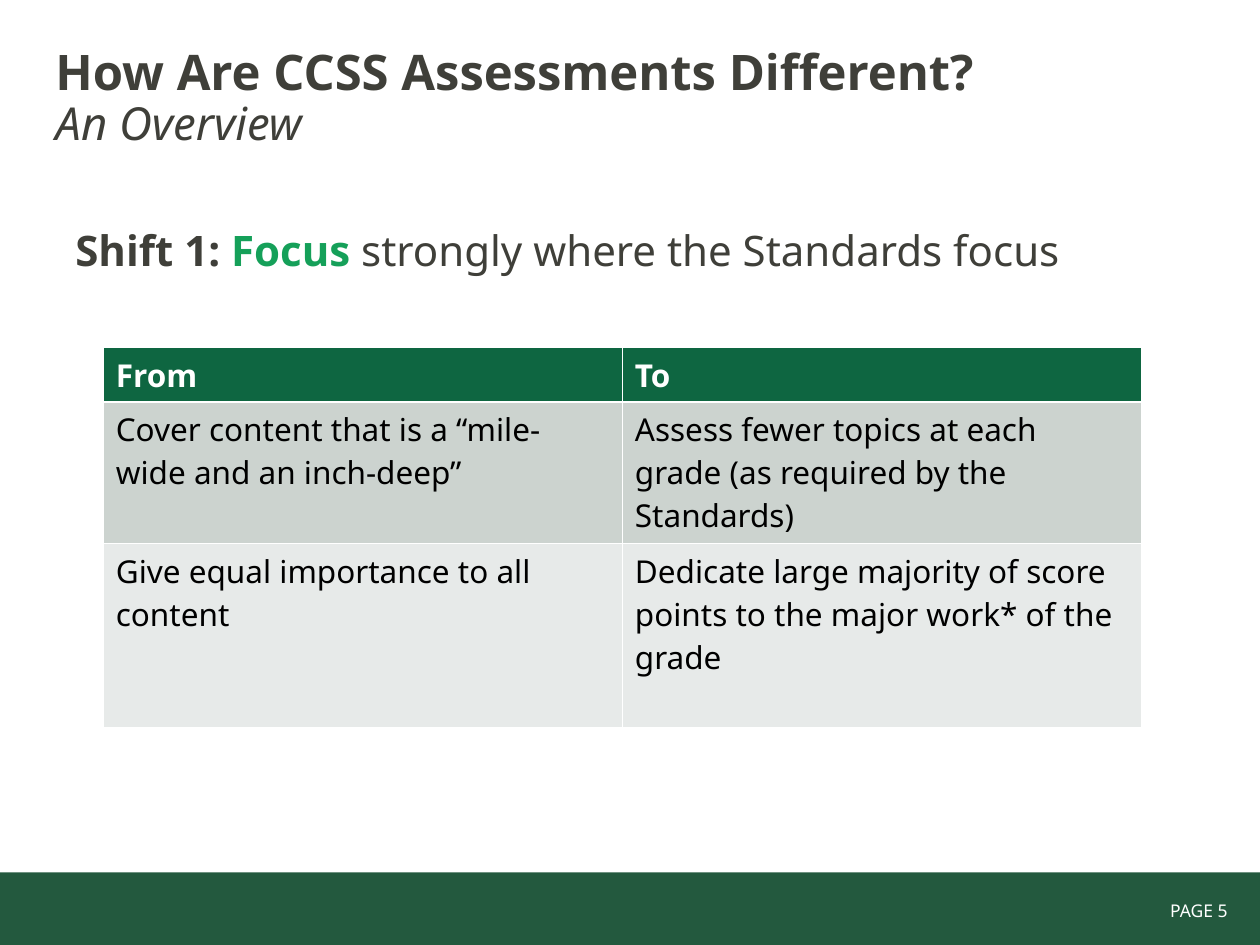
import pptx
import pptx.util
import pptx.dml.color
import pptx.enum.shapes
import pptx.enum.text

Pt = pptx.util.Pt
Align = pptx.enum.text.PP_ALIGN


def color(code):
    return pptx.dml.color.RGBColor.from_string(code)


class Page:
    face = "Noto Sans"
    dark = "3F3F39"
    white = "FFFFFF"
    green = "15A059"
    band = "23593E"
    fills = ["0E6641", "CCD3CF", "E7EAE9"]

    def __init__(self, deck):
        self.slide = deck.slides.add_slide(deck.slide_layouts[5])

    def place(self, shape, box):
        shape.left, shape.top, shape.width, shape.height = map(Pt, box)

    def style(self, font, size, code, bold=None):
        font.name = self.face
        font.size = Pt(size)
        font.color.rgb = color(code)
        font.bold = bold

    def bar(self, box):
        shape = self.slide.shapes.add_shape(
            pptx.enum.shapes.MSO_SHAPE.RECTANGLE, *map(Pt, box))
        shape.shadow.inherit = False
        shape.fill.solid()
        shape.fill.fore_color.rgb = color(self.band)
        shape.line.fill.background()

    def title(self, box, head, sub):
        shape = self.slide.shapes.title
        self.place(shape, box)
        frame = shape.text_frame
        frame.auto_size = pptx.enum.text.MSO_AUTO_SIZE.NONE
        frame.vertical_anchor = pptx.enum.text.MSO_ANCHOR.MIDDLE
        para = frame.paragraphs[0]
        para.alignment = Align.LEFT
        para.line_spacing = 0.9
        first = para.add_run()
        first.text = head
        self.style(first.font, 28, self.dark, True)
        para.add_line_break()
        last = para.add_run()
        last.text = sub
        self.style(last.font, 26, self.dark, False)
        last.font.italic = True

    def text(self, box, parts, size, align=Align.LEFT):
        shape = self.slide.shapes.add_textbox(*map(Pt, box))
        shape.text_frame.word_wrap = True
        para = shape.text_frame.paragraphs[0]
        para.alignment = align
        para.font.name = self.face
        para.font.size = Pt(size)
        for words, code, bold in parts:
            run = para.add_run()
            run.text = words
            run.font.color.rgb = color(code)
            run.font.bold = bold

    def table(self, box, rows, highs):
        grid = self.slide.shapes.add_table(
            len(rows), len(rows[0]), *map(Pt, box)).table
        for y, row in enumerate(rows):
            grid.rows[y].height = Pt(highs[y])
            for x, words in enumerate(row):
                cell = grid.cell(y, x)
                cell.text = words
                cell.fill.solid()
                cell.fill.fore_color.rgb = color(self.fills[y])
                code = self.white if y == 0 else "000000"
                self.style(cell.text_frame.paragraphs[0].font, 18, code, y == 0)


def main():
    deck = pptx.Presentation()
    deck.slide_width, deck.slide_height = Pt(720), Pt(540)
    page = Page(deck)
    page.bar((0, 498.5, 720, 41.5))
    page.text((596, 510.5, 112.5, 19.5), [("PAGE 5", page.white, False)], 10, Align.RIGHT)
    page.title((24.5, 11.5, 648, 90), "How Are CCSS Assessments Different?", "An Overview")
    page.text((36, 124.5, 648, 40), [
        ("Shift 1: ", page.dark, True),
        ("Focus ", page.green, True),
        ("strongly where the Standards focus", page.dark, False),
    ], 24)
    page.table((59, 198.7, 593.3, 217), [
        ["From", "To"],
        ["Cover content that is a “mile-wide and an inch-deep”",
         "Assess fewer topics at each grade (as required by the Standards)"],
        ["Give equal importance to all content",
         "Dedicate large majority of score points to the major work* of the grade"],
    ], [31, 81, 105])
    deck.save("out.pptx")


if __name__ == "__main__":
    main()
